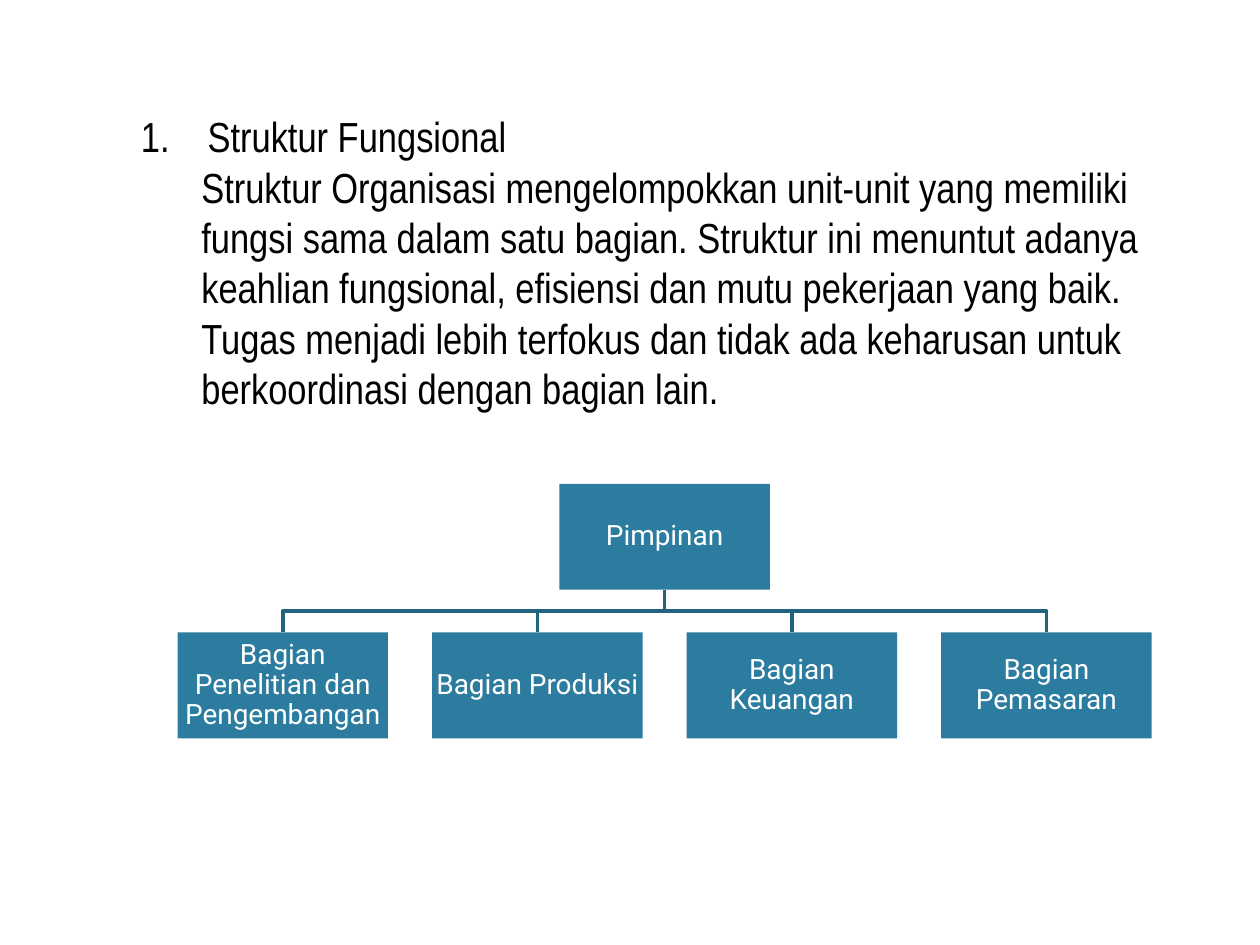
import pptx
import pptx.util
import pptx.dml.color
import pptx.enum.shapes
import pptx.enum.text
from lxml import etree
from pptx.oxml.ns import qn
from pptx.util import Inches

BLACK = pptx.dml.color.RGBColor(0x00, 0x00, 0x00)
WHITE = pptx.dml.color.RGBColor(0xFF, 0xFF, 0xFF)
BOX_BLUE = pptx.dml.color.RGBColor(0x2C, 0x7C, 0x9F)
LINE_BLUE = pptx.dml.color.RGBColor(0x23, 0x63, 0x7F)

HEADING = "Struktur Fungsional"
EXPLANATION = (
    "Struktur Organisasi mengelompokkan unit-unit yang memiliki fungsi sama "
    "dalam satu bagian. Struktur ini menuntut adanya keahlian fungsional, "
    "efisiensi dan mutu pekerjaan yang baik. Tugas menjadi lebih terfokus dan "
    "tidak ada keharusan untuk berkoordinasi dengan bagian lain."
)
LEADER = "Pimpinan"
DEPARTMENTS = [
    "Bagian Penelitian dan Pengembangan",
    "Bagian Produksi",
    "Bagian Keuangan",
    "Bagian Pemasaran",
]

# Chart grid in inches
BOX_W, BOX_H = 1.67, 0.84
LEADER_TOP, DEPARTMENT_TOP = 3.84, 5.02
FIRST_LEFT, PITCH = 1.41, 2.02
LEADER_LEFT = FIRST_LEFT + PITCH * (len(DEPARTMENTS) - 1) / 2


def format_runs(paragraph, font_name, size, color):
    for run in paragraph.runs:
        run.font.name = font_name
        run.font.size = pptx.util.Pt(size)
        run.font.color.rgb = color


def set_indent(paragraph, margin, first_line):
    properties = paragraph._p.get_or_add_pPr()
    properties.set("marL", str(Inches(margin)))
    properties.set("indent", str(Inches(first_line)))
    return properties


def add_description(slide):
    description = slide.shapes.add_textbox(
        Inches(1.02), Inches(0.83), Inches(8.54), Inches(4.14))
    frame = description.text_frame
    frame.word_wrap = True

    heading = frame.paragraphs[0]
    heading.text = HEADING
    numbering = set_indent(heading, 0.53, -0.53)
    etree.SubElement(numbering, qn("a:buAutoNum"), type="arabicPeriod")

    explanation = frame.add_paragraph()
    explanation.text = EXPLANATION
    set_indent(explanation, 0.48, 0)

    for paragraph in frame.paragraphs:
        format_runs(paragraph, "Arial Narrow", 24, BLACK)


def add_unit(slide, name, left, top):
    unit = slide.shapes.add_shape(
        pptx.enum.shapes.MSO_SHAPE.RECTANGLE,
        Inches(left), Inches(top), Inches(BOX_W), Inches(BOX_H))
    unit.shadow.inherit = False
    unit.fill.solid()
    unit.fill.fore_color.rgb = BOX_BLUE
    unit.line.fill.background()

    frame = unit.text_frame
    frame.word_wrap = True
    frame.vertical_anchor = pptx.enum.text.MSO_ANCHOR.MIDDLE
    frame.margin_left = frame.margin_right = Inches(0.01)
    frame.margin_top = frame.margin_bottom = Inches(0.01)
    frame.text = name
    label = frame.paragraphs[0]
    label.alignment = pptx.enum.text.PP_ALIGN.CENTER
    label.line_spacing = 0.9
    format_runs(label, "Roboto", 16, WHITE)


def add_branch(slide, department_left):
    """Draw the bent line from the leader down to one department."""
    start_x = Inches(LEADER_LEFT + BOX_W / 2)
    end_x = Inches(department_left + BOX_W / 2)
    start_y = Inches(LEADER_TOP + BOX_H)
    end_y = Inches(DEPARTMENT_TOP)
    middle_y = (start_y + end_y) // 2
    builder = slide.shapes.build_freeform(start_x, start_y)
    builder.add_line_segments(
        [(start_x, middle_y), (end_x, middle_y), (end_x, end_y)], close=False)
    branch = builder.convert_to_shape()
    branch.shadow.inherit = False
    branch.fill.background()
    branch.line.color.rgb = LINE_BLUE
    branch.line.width = pptx.util.Pt(2)


def main():
    presentation = pptx.Presentation()
    presentation.slide_width = Inches(10)
    presentation.slide_height = Inches(7.5)
    slide = presentation.slides.add_slide(presentation.slide_layouts[6])

    add_description(slide)

    # Organisation chart: branches behind, boxes in front
    lefts = [FIRST_LEFT + PITCH * i for i in range(len(DEPARTMENTS))]
    for left in lefts:
        add_branch(slide, left)
    add_unit(slide, LEADER, LEADER_LEFT, LEADER_TOP)
    for name, left in zip(DEPARTMENTS, lefts):
        add_unit(slide, name, left, DEPARTMENT_TOP)

    presentation.save("out.pptx")


if __name__ == "__main__":
    main()
